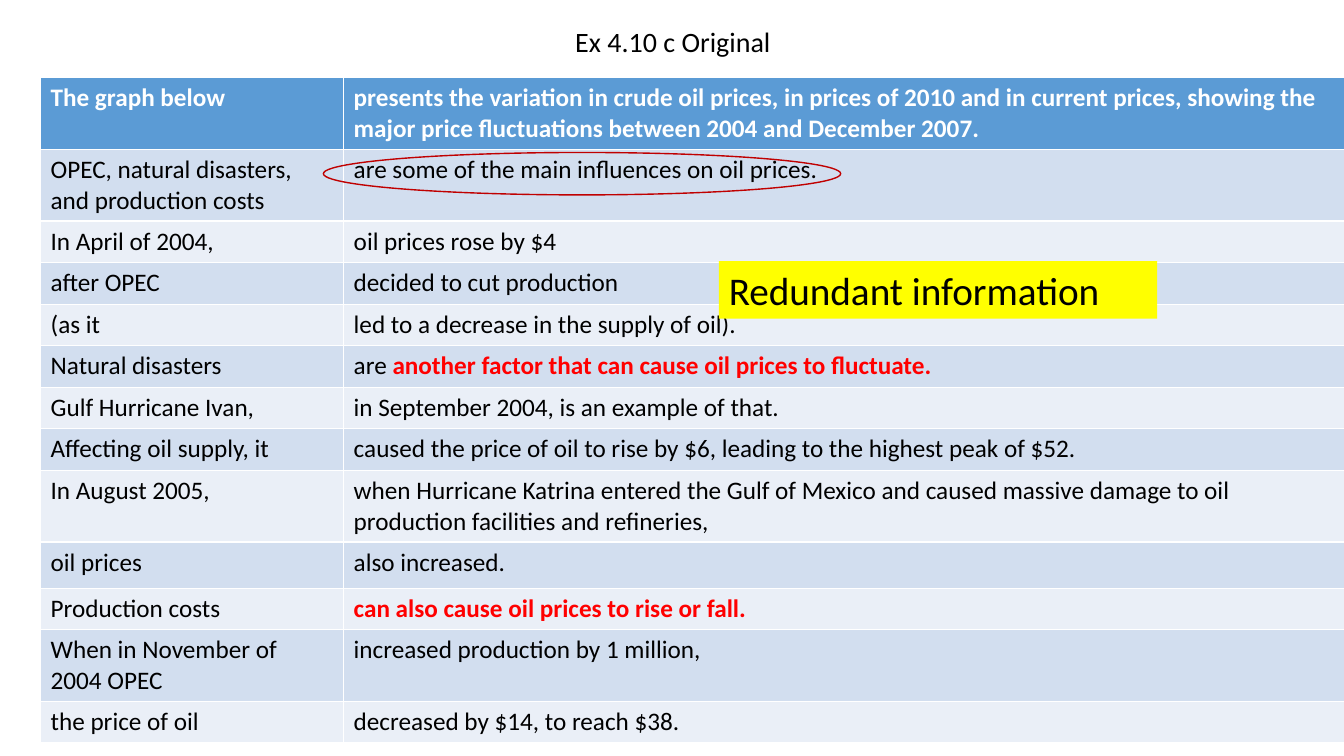
from pptx import Presentation
from pptx import util as u
from pptx.dml.color import RGBColor
from pptx.enum import shapes, text

COLORS = {
    "black": "000000", "white": "FFFFFF", "red": "FF0000", "ring": "C00000",
    "yellow": "FFFF00", "header": "5B9BD5", "band": "D2DEEF", "light": "EAEFF7",
}
FONT = "Calibri"
LINE, TWO_LINES, TALL = 29.7, 51.2, 33

# Each row: height, subject, plain text, red bold text
ROWS = [
    (TWO_LINES, "The graph below",
     "presents the variation in crude oil prices, in prices of 2010 and in current "
     "prices, showing the major price fluctuations between 2004 and December 2007.", ""),
    (TWO_LINES, "OPEC, natural disasters, and production costs",
     "are some of the main influences on oil prices.", ""),
    (LINE, "In April of 2004,", "oil prices rose by $4", ""),
    (LINE, "after OPEC", "decided to cut production", ""),
    (LINE, "(as it", "led to a decrease in the supply of oil).", ""),
    (LINE, "Natural disasters", "are ",
     "another factor that can cause oil prices to fluctuate."),
    (LINE, "Gulf Hurricane Ivan,", "in September 2004, is an example of that.", ""),
    (LINE, "Affecting oil supply, it",
     "caused the price of oil to rise by $6, leading to the highest peak of $52.", ""),
    (TWO_LINES, "In August 2005,",
     "when Hurricane Katrina entered the Gulf of Mexico and caused massive damage "
     "to oil production facilities and refineries,", ""),
    (TALL, "oil prices", "also increased.", ""),
    (LINE, "Production costs", "", "can also cause oil prices to rise or fall."),
    (TWO_LINES, "When in November of 2004 OPEC", "increased production by 1 million,", ""),
    (LINE, "the price of oil", "decreased by $14, to reach $38.", ""),
]


def rgb(name):
    return RGBColor.from_string(COLORS[name])


def add_run(p, content, size=18, color="black", bold=False):
    r = p.add_run()
    r.text = content
    r.font.name, r.font.size, r.font.bold = FONT, u.Pt(size), bold
    r.font.color.rgb = rgb(color)


class SlideBuilder:
    """Holds the current slide and adds styled elements, measured in points."""

    def __init__(self, prs):
        self.s = prs.slides.add_slide(prs.slide_layouts[5])

    def title(self, content, x, y, w, h):
        sp = self.s.shapes.title
        sp.left, sp.top, sp.width, sp.height = map(u.Pt, (x, y, w, h))
        sp.text_frame.vertical_anchor = text.MSO_ANCHOR.MIDDLE
        p = sp.text_frame.paragraphs[0]
        p.alignment, p.line_spacing = text.PP_ALIGN.CENTER, 0.9
        add_run(p, content, size=20)

    def table(self, rows, x, y, widths):
        heights = [row[0] for row in rows]
        box = map(u.Pt, (x, y, sum(widths), sum(heights)))
        tbl = self.s.shapes.add_table(len(rows), len(widths), *box).table
        for col, width in zip(tbl.columns, widths):
            col.width = u.Pt(width)
        for i, (height, subject, plain, marked) in enumerate(rows):
            tbl.rows[i].height = u.Pt(height)
            fill = "header" if i == 0 else "band" if i % 2 else "light"
            color = "white" if i == 0 else "black"
            for cell, content in zip(tbl.rows[i].cells, (subject, plain)):
                cell.fill.solid()
                cell.fill.fore_color.rgb = rgb(fill)
                if content:
                    add_run(cell.text_frame.paragraphs[0], content,
                            color=color, bold=i == 0)
            if marked:
                add_run(tbl.cell(i, 1).text_frame.paragraphs[0], marked,
                        color="red", bold=True)

    def label(self, content, x, y, w, h, fill="yellow", size=28):
        sp = self.s.shapes.add_textbox(*map(u.Pt, (x, y, w, h)))
        sp.fill.solid()
        sp.fill.fore_color.rgb = rgb(fill)
        tf = sp.text_frame
        tf.word_wrap = True
        tf.auto_size = text.MSO_AUTO_SIZE.SHAPE_TO_FIT_TEXT
        add_run(tf.paragraphs[0], content, size=size)

    def ring(self, x, y, w, h, color="ring"):
        sp = self.s.shapes.add_shape(shapes.MSO_SHAPE.OVAL, *map(u.Pt, (x, y, w, h)))
        sp.shadow.inherit = False
        sp.fill.background()
        sp.line.color.rgb = rgb(color)
        sp.line.width = u.Pt(1)


def main():
    prs = Presentation()
    prs.slide_width, prs.slide_height = u.Pt(960), u.Pt(540)
    slide = SlideBuilder(prs)
    slide.title("Ex 4.10 c Original ", 69, 10, 828, 42.5)
    slide.table(ROWS, 29, 55.5, (216.5, 715))
    slide.label("Redundant information", 513.5, 186.5, 313, 41.2)
    slide.ring(231, 108.9, 369.5, 30.3)
    prs.save("out.pptx")


if __name__ == "__main__":
    main()
